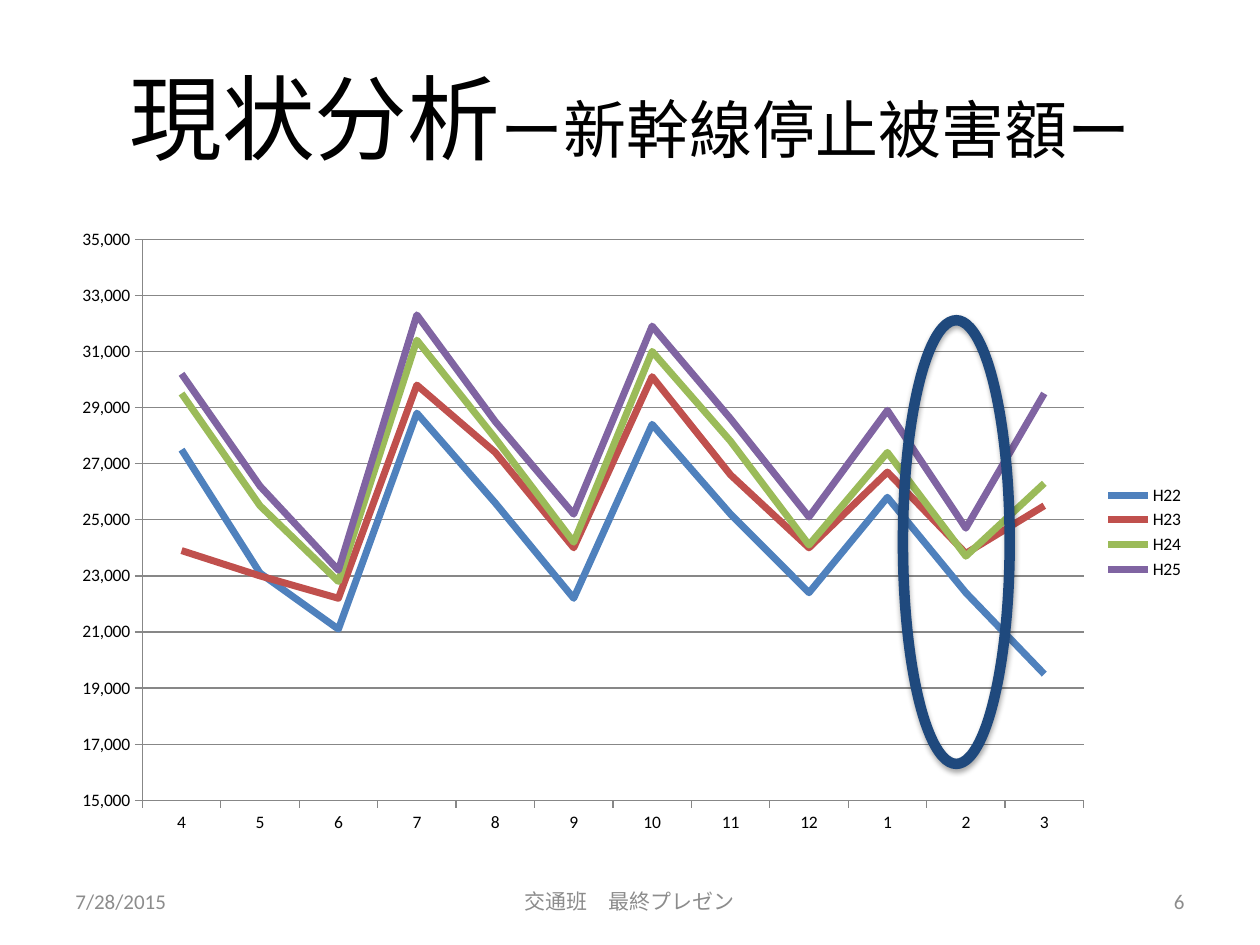
from dataclasses import dataclass

from lxml.etree import SubElement
from pptx import Presentation
from pptx.chart.data import CategoryChartData
from pptx.dml.color import RGBColor
from pptx.enum.chart import XL_CHART_TYPE, XL_LEGEND_POSITION, XL_TICK_MARK
from pptx.enum.shapes import MSO_SHAPE
from pptx.enum.text import MSO_ANCHOR, PP_ALIGN
from pptx.oxml.ns import qn
from pptx.util import Pt


@dataclass(frozen=True)
class Theme:
    font: str = "Calibri"
    ink: str = "000000"
    muted: str = "8C8C8C"
    grid: str = "878787"
    accent: str = "1F497D"
    title_size: float = 53
    subtitle_size: float = 36
    footer_size: float = 12
    chart_size: float = 10
    series_width: float = 4
    grid_width: float = 0.75
    ring_width: float = 6


THEME = Theme()

MONTHS = ["4", "5", "6", "7", "8", "9", "10", "11", "12", "1", "2", "3"]
# Year: (line colour, monthly values)
YEARS = {
    "H22": ("4F81BD", [27500, 23100, 21100, 28800, 25600, 22200,
                       28400, 25200, 22400, 25800, 22400, 19500]),
    "H23": ("C0504D", [23900, 23000, 22200, 29800, 27400, 24000,
                       30100, 26600, 24000, 26700, 23800, 25500]),
    "H24": ("9BBB59", [29500, 25500, 22800, 31400, 27900, 24200,
                       31000, 27800, 24100, 27400, 23700, 26300]),
    "H25": ("8064A2", [30200, 26200, 23200, 32300, 28500, 25200,
                       31900, 28600, 25100, 28900, 24700, 29500]),
}


def points(box):
    return [Pt(length) for length in box]


def set_attributes(target, values):
    for name, value in values.items():
        setattr(target, name, value)


def style_font(font, size, color):
    set_attributes(font, {"name": THEME.font, "size": Pt(size), "bold": False})
    font.color.rgb = RGBColor.from_string(color)


def style_line(line, color, width):
    line.color.rgb = RGBColor.from_string(color)
    line.width = Pt(width)


def add_text(slide, box, runs, color, alignment):
    """Place one line of text; runs are (text, size) pairs."""
    frame = slide.shapes.add_textbox(*points(box)).text_frame
    set_attributes(frame, {"word_wrap": True, "vertical_anchor": MSO_ANCHOR.MIDDLE})
    paragraph = frame.paragraphs[0]
    paragraph.alignment = alignment
    for text, size in runs:
        run = paragraph.add_run()
        run.text = text
        style_font(run.font, size, color)


def add_title(slide, box):
    runs = [("現状分析", THEME.title_size), ("ー新幹線停止被害額ー", THEME.subtitle_size)]
    add_text(slide, box, runs, THEME.ink, PP_ALIGN.CENTER)


def add_footer(slide, box):
    left, top, width, height = box
    side, middle = 168, 228
    parts = [
        ("7/28/2015", left, side, PP_ALIGN.LEFT),
        ("交通班　最終プレゼン", left + (width - middle) / 2, middle, PP_ALIGN.CENTER),
        ("6", left + width - side, side, PP_ALIGN.RIGHT),
    ]
    for text, part_left, part_width, alignment in parts:
        add_text(slide, (part_left, top, part_width, height),
                 [(text, THEME.footer_size)], THEME.muted, alignment)


def set_plot_layout(chart, fractions):
    """Fix the inner plot area as fractions of the chart."""
    plot_area = chart.element.find(".//" + qn("c:plotArea"))
    layout = plot_area.find(qn("c:layout"))
    if layout is None:
        layout = SubElement(plot_area, qn("c:layout"))
        plot_area.insert(0, layout)
    manual = SubElement(layout, qn("c:manualLayout"))
    settings = {"layoutTarget": "inner", "xMode": "edge", "yMode": "edge", **fractions}
    for name, value in settings.items():
        SubElement(manual, qn("c:" + name)).set("val", str(value))


def add_line_chart(slide, box):
    data = CategoryChartData(number_format="#,##0")
    data.categories = MONTHS
    for year, (_, values) in YEARS.items():
        data.add_series(year, values)
    chart = slide.shapes.add_chart(XL_CHART_TYPE.LINE, *points(box), data).chart
    set_attributes(chart, {"has_title": False, "has_legend": True})
    style_font(chart.font, THEME.chart_size, THEME.ink)
    set_attributes(chart.legend, {"position": XL_LEGEND_POSITION.RIGHT,
                                  "include_in_layout": False})
    set_plot_layout(chart, {"x": 0.07, "y": 0.03, "w": 0.83, "h": 0.9})

    # Axes
    value_axis = chart.value_axis
    set_attributes(value_axis, {"minimum_scale": 15000, "maximum_scale": 35000,
                                "major_unit": 2000, "has_major_gridlines": True})
    set_attributes(value_axis.tick_labels, {"number_format": "#,##0",
                                            "number_format_is_linked": False})
    for axis in (chart.category_axis, value_axis):
        axis.major_tick_mark = XL_TICK_MARK.OUTSIDE
        style_line(axis.format.line, THEME.grid, THEME.grid_width)
    style_line(value_axis.major_gridlines.format.line, THEME.grid, THEME.grid_width)

    # Series
    plot = chart.plots[0]
    plot.vary_by_categories = False
    for series, (color, _) in zip(plot.series, YEARS.values()):
        series.smooth = False
        style_line(series.format.line, color, THEME.series_width)


def add_highlight_ring(slide, box):
    ring = slide.shapes.add_shape(MSO_SHAPE.OVAL, *points(box))
    ring.fill.background()
    style_line(ring.line, THEME.accent, THEME.ring_width)
    ring.shadow.inherit = False

    # Soft shadow straight below
    effects = ring.element.spPr.find(qn("a:effectLst"))
    shadow = SubElement(effects, qn("a:outerShdw"), blurRad=str(Pt(3.1)),
                        dist=str(Pt(1.8)), dir="5400000", rotWithShape="0")
    color = SubElement(shadow, qn("a:srgbClr"), val=THEME.ink)
    SubElement(color, qn("a:alpha"), val="35000")


def main():
    presentation = Presentation()
    set_attributes(presentation, {"slide_width": Pt(720), "slide_height": Pt(540)})
    slide = presentation.slides.add_slide(presentation.slide_layouts[6])
    margin, width = 36, 648
    add_title(slide, (margin, 21.6, width, 90))
    add_footer(slide, (margin, 500.5, width, 28.75))
    add_line_chart(slide, (margin, 126, width, 356.4))
    add_highlight_ring(slide, (516, 183, 61, 253.5))
    presentation.save("out.pptx")


if __name__ == "__main__":
    main()
